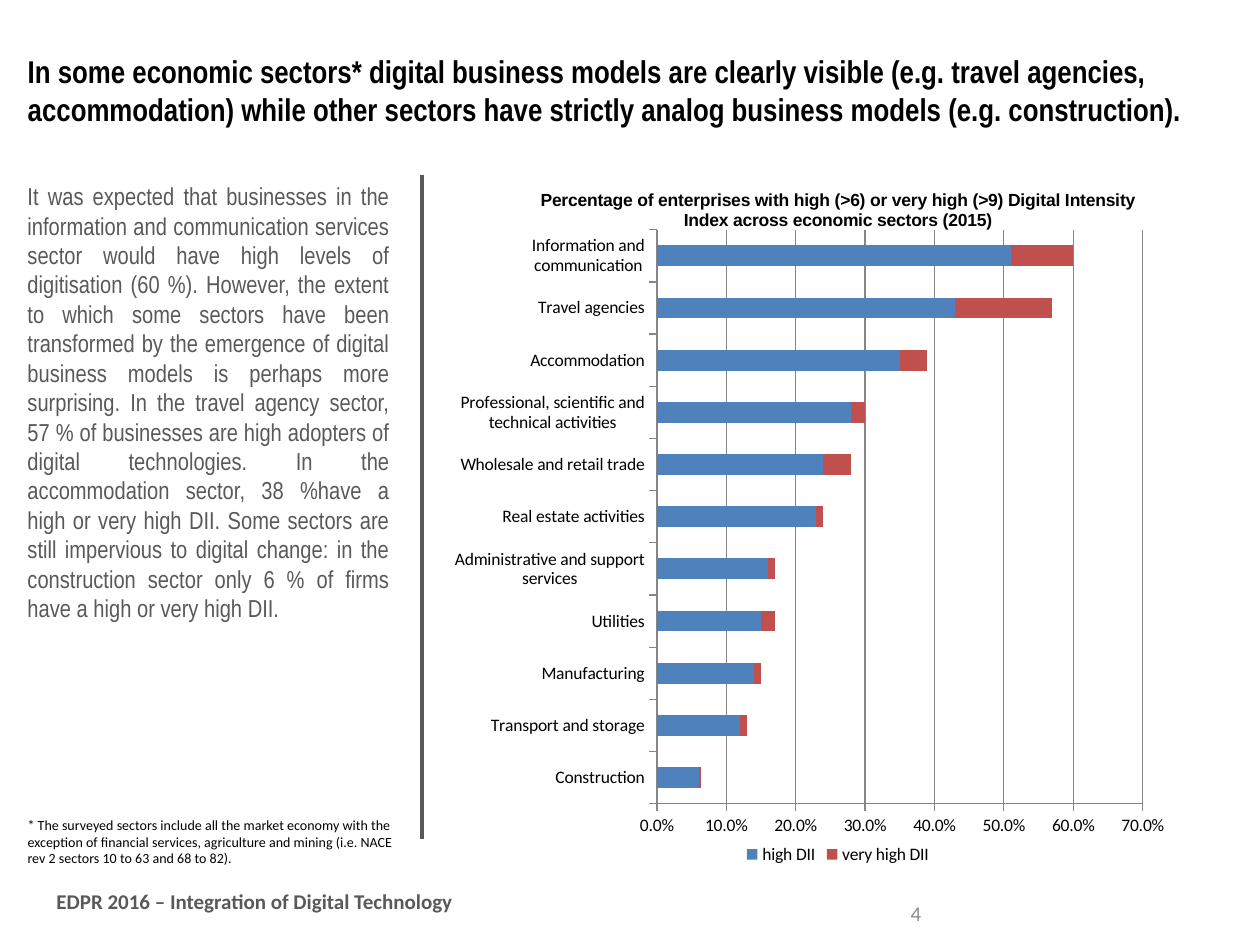
from dataclasses import dataclass

from lxml.etree import SubElement as Sub
from pptx import Presentation
from pptx.chart.data import CategoryChartData as ChartData
from pptx.dml.color import RGBColor
from pptx.enum.chart import XL_CHART_TYPE as Kind
from pptx.enum.chart import XL_LEGEND_POSITION as Place
from pptx.enum.chart import XL_TICK_MARK as Tick
from pptx.enum.shapes import MSO_CONNECTOR as Conn
from pptx.enum.text import MSO_ANCHOR as Anchor
from pptx.enum.text import MSO_AUTO_SIZE as Fit
from pptx.enum.text import PP_ALIGN as Align
from pptx.oxml.ns import qn
from pptx.util import Pt

GREY, BLACK, AXIS = "595959", "000000", "868686"


@dataclass
class Block:
    text: str
    box: tuple[float, float, float, float]
    size: float
    face: str = "Calibri"
    hue: str = BLACK
    bold: bool = False
    align: Align = Align.LEFT
    anchor: Anchor = Anchor.TOP
    fit: Fit = Fit.NONE


TITLE = Block(
    "In some economic sectors* digital business models are clearly visible "
    "(e.g. travel agencies, accommodation) while other sectors have strictly "
    "analog business models (e.g. construction).",
    (8.64, 8.64, 702.72, 85.68), 18, "Arial Narrow", bold=True,
    anchor=Anchor.MIDDLE)

BLOCKS = [
    # Commentary
    Block(
        "It was expected that businesses in the information and communication "
        "services sector would have high levels of digitisation (60 %). "
        "However, the extent to which some sectors have been transformed by "
        "the emergence of digital business models is perhaps more surprising. "
        "In the travel agency sector, 57 % of businesses are high adopters of "
        "digital technologies. In the accommodation sector, 38 %have a high or "
        "very high DII. Some sectors are still impervious to digital change: "
        "in the construction sector only 6 % of firms have a high or very "
        "high DII.",
        (8.64, 100, 221, 380), 14, "Arial Narrow", GREY, align=Align.JUSTIFY),
    # Footnote
    Block(
        "* The surveyed sectors include all the market economy with the "
        "exception of financial services, agriculture and mining (i.e. NACE "
        "rev 2 sectors 10 to 63 and 68 to 82).",
        (8.64, 463, 224.64, 36), 8, fit=Fit.SHAPE_TO_FIT_TEXT),
    # Footer and page number
    Block("EDPR 2016 – Integration of Digital Technology",
          (25.2, 496.8, 476, 36.72), 12, hue=GREY, bold=True,
          anchor=Anchor.MIDDLE),
    Block("4", (490.32, 507.6, 43.2, 28.8), 12, hue="8C8C8C",
          align=Align.RIGHT, anchor=Anchor.MIDDLE),
]

# Sector, share with high DII, share with very high DII
ROWS = [
    ("Construction", 0.06, 0.003),
    ("Transport and storage", 0.12, 0.01),
    ("Manufacturing", 0.14, 0.01),
    ("Utilities", 0.15, 0.02),
    ("Administrative and support services", 0.16, 0.01),
    ("Real estate activities", 0.23, 0.01),
    ("Wholesale and retail trade", 0.24, 0.04),
    ("Professional, scientific and technical activities", 0.28, 0.02),
    ("Accommodation", 0.35, 0.04),
    ("Travel agencies", 0.43, 0.14),
    ("Information and communication", 0.51, 0.09),
]
SERIES = [("high DII", "4F81BD"), ("very high DII", "C0504D")]


def tint(target, hue: str) -> None:
    """Give a fill, or the fill of a line, one plain colour."""
    target.solid()
    target.fore_color.rgb = RGBColor.from_string(hue)


def style(font, size: float, face: str, hue: str, bold: bool) -> None:
    font.size, font.name, font.bold = Pt(size), face, bold
    tint(font.fill, hue)


def write(shape, block: Block) -> None:
    shape.left, shape.top, shape.width, shape.height = map(Pt, block.box)
    frame = shape.text_frame
    frame.word_wrap = True
    frame.auto_size = block.fit
    frame.vertical_anchor = block.anchor
    para = frame.paragraphs[0]
    para.alignment = block.align
    run = para.add_run()
    run.text = block.text
    style(run.font, block.size, block.face, block.hue, block.bold)


def set_plot(chart, x: float, y: float, w: float, h: float) -> None:
    """Fix the inner plot area as fractions of the chart."""
    area = chart.plots[0]._element.getparent()
    layout = area.find(qn("c:layout"))
    if layout is None:
        layout = Sub(area, qn("c:layout"))
        area.insert(0, layout)
    manual = Sub(layout, qn("c:manualLayout"))
    parts = [("layoutTarget", "inner"), ("xMode", "edge"), ("yMode", "edge"),
             ("x", x), ("y", y), ("w", w), ("h", h)]
    for tag, val in parts:
        Sub(manual, qn(f"c:{tag}")).set("val", str(val))


def add_bars(slide) -> None:
    data = ChartData(number_format="0.0%")
    data.categories = [row[0] for row in ROWS]
    for col, (name, _) in enumerate(SERIES, 1):
        data.add_series(name, [row[col] for row in ROWS])
    box = map(Pt, (252, 94.32, 453.6, 402.48))
    chart = slide.shapes.add_chart(Kind.BAR_STACKED, *box, data).chart
    style(chart.font, 10, "Calibri", BLACK, False)

    # Title and legend
    run = chart.chart_title.text_frame.paragraphs[0].add_run()
    run.text = ("Percentage of enterprises with high (>6) or very high (>9) "
                "Digital Intensity Index across economic sectors (2015)")
    style(run.font, 10, "Arial", BLACK, True)
    chart.has_legend = True
    chart.legend.position = Place.BOTTOM
    chart.legend.include_in_layout = False

    # Bars
    plot = chart.plots[0]
    plot.gap_width, plot.overlap = 150, 100
    plot.vary_by_categories = False
    for bars, (_, hue) in zip(plot.series, SERIES):
        tint(bars.format.fill, hue)
    set_plot(chart, 0.272, 0.092, 0.612, 0.815)

    # Axes
    scale = chart.value_axis
    scale.minimum_scale, scale.maximum_scale, scale.major_unit = 0, 0.7, 0.1
    scale.has_major_gridlines = True
    scale.tick_labels.number_format = "0.0%"
    scale.tick_labels.number_format_is_linked = False
    for axis in (chart.category_axis, scale):
        axis.major_tick_mark = Tick.OUTSIDE
        axis.minor_tick_mark = Tick.NONE
    for part in (chart.category_axis, scale, scale.major_gridlines):
        tint(part.format.line.fill, AXIS)
        part.format.line.width = Pt(0.75)


def add_rule(slide) -> None:
    ends = map(Pt, (241.2, 100, 241.2, 479.52))
    rule = slide.shapes.add_connector(Conn.STRAIGHT, *ends)
    tint(rule.line.fill, GREY)
    rule.line.width = Pt(2)
    Sub(rule._element.spPr, qn("a:effectLst"))


def main() -> None:
    deck = Presentation()
    deck.slide_width, deck.slide_height = Pt(720), Pt(540)
    slide = deck.slides.add_slide(deck.slide_layouts[5])
    add_rule(slide)
    write(slide.shapes.title, TITLE)
    add_bars(slide)
    for block in BLOCKS:
        write(slide.shapes.add_textbox(*map(Pt, block.box)), block)
    deck.save("out.pptx")


if __name__ == "__main__":
    main()
